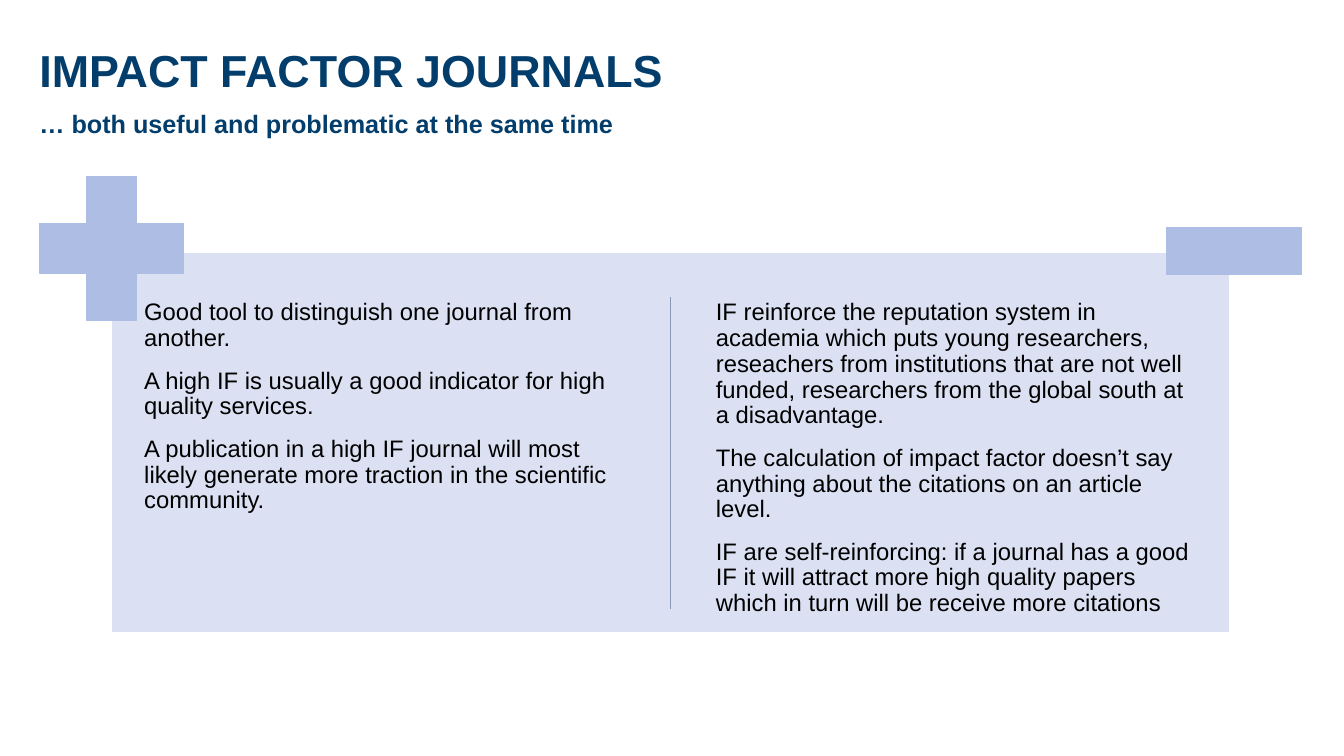
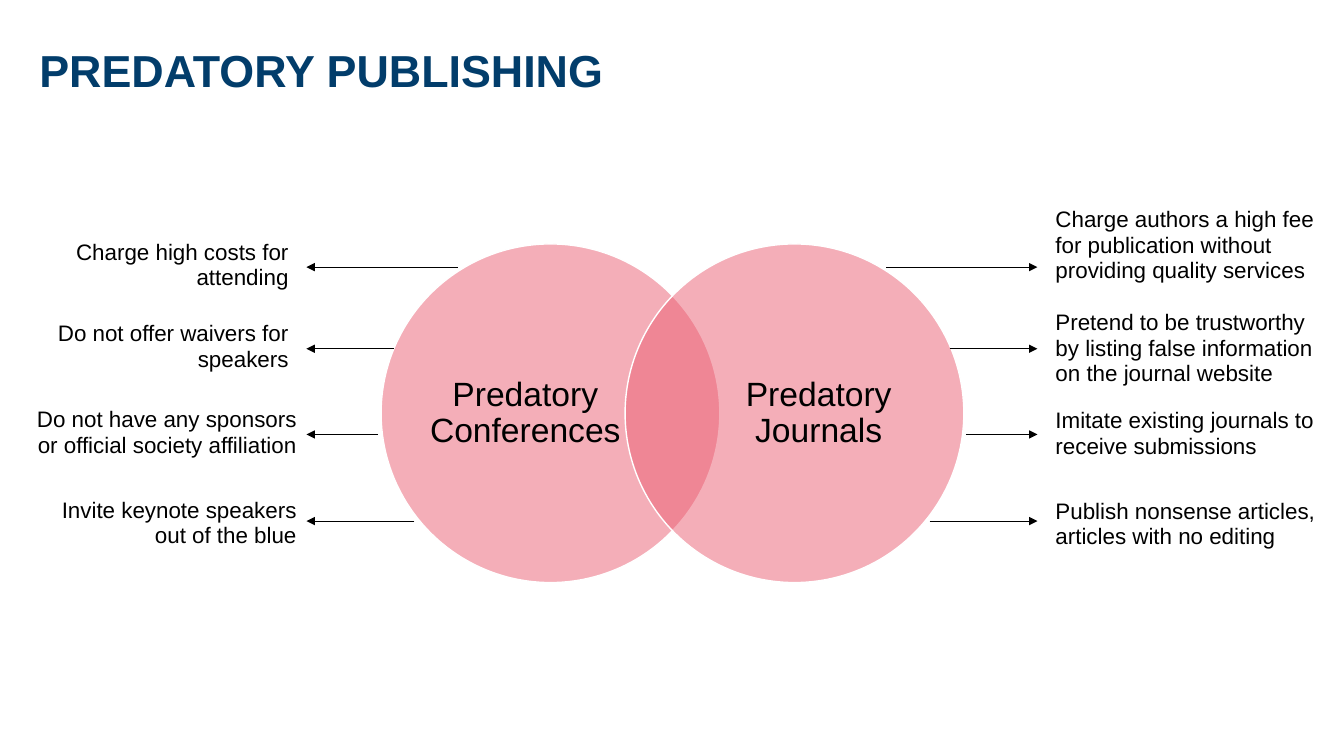
from dataclasses import dataclass

from lxml import etree
from pptx import Presentation
from pptx.dml.color import RGBColor
from pptx.enum import shapes, text
from pptx.oxml import ns
from pptx.slide import Slide
from pptx.util import Inches, Pt

WIDTH, HEIGHT = 13.33, 7.5
FONT = "Arial"
NAVY = RGBColor(0x02, 0x3D, 0x6B)
BLACK = RGBColor(0, 0, 0)
WHITE = RGBColor(0xFF, 0xFF, 0xFF)
PALE = RGBColor(0xDB, 0xE1, 0xF2)
BLUE = RGBColor(0xAD, 0xBD, 0xE3)
SLATE = RGBColor(0x8B, 0x97, 0xB6)
ROSE = RGBColor(0xEB, 0x5F, 0x73)

KIND = shapes.MSO_SHAPE
ALIGN = text.PP_ALIGN
ANCHOR = text.MSO_ANCHOR


@dataclass(frozen=True)
class Box:
    left: float
    top: float
    width: float
    height: float

    def place(self) -> tuple:
        return tuple(map(Inches, (self.left, self.top, self.width, self.height)))


@dataclass(frozen=True)
class Style:
    size: float
    color: RGBColor = BLACK
    bold: bool = False
    align: ALIGN = ALIGN.LEFT
    anchor: ANCHOR = ANCHOR.TOP
    line: float = 1.0
    after: float = 0
    pad: tuple = (0, 0)


@dataclass(frozen=True)
class Note:
    """A remark beside the circles."""
    left: float
    top: float
    height: float
    words: str


@dataclass(frozen=True)
class Ring:
    left: float
    label: float
    words: str


HEAD = Style(32, NAVY, True, line=1.14)
SUB = Style(18, NAVY, True, line=1.14)
BODY = Style(17, line=0.9, after=12, pad=(0.04, 0.04))
NAME = Style(24, align=ALIGN.CENTER, anchor=ANCHOR.MIDDLE, line=0.9, after=8.4)
SIDE = Style(16, line=0.95, pad=(0.1, 0.05))
LEFT = Style(16, align=ALIGN.RIGHT, line=0.95, pad=(0.1, 0.05))

COLUMNS = {
    1.39: (
        "Good tool to distinguish one journal from another.",
        "A high IF is usually a good indicator for high quality services.",
        "A publication in a high IF journal will most likely generate more "
        "traction in the scientific community.",
    ),
    7.06: (
        "IF reinforce the reputation system in academia which puts young "
        "researchers, reseachers from institutions that are not well funded, "
        "researchers from the global south at a disadvantage.",
        "The calculation of impact factor doesn’t say anything about the "
        "citations on an article level.",
        "IF are self-reinforcing: if a journal has a good IF it will attract "
        "more high quality papers which in turn will be receive more citations",
    ),
}

RINGS = (
    Ring(3.78, 4.24, "Predatory Conferences"),
    Ring(6.2, 7.15, "Predatory Journals"),
)
RING_TOP, RING_SIZE = 2.42, 3.36

NOTES = (
    Note(0.15, 2.33, 0.61, "Charge high costs for attending"),
    Note(0.15, 3.14, 0.61, "Do not offer waivers for speakers"),
    Note(0.23, 3.99, 0.61,
         "Do not have any sponsors or official society affiliation"),
    Note(0.23, 4.89, 0.61, "Invite keynote speakers out of the blue"),
    Note(10.37, 2.01, 0.87, "Charge authors a high fee for publication "
         "without providing quality services"),
    Note(10.37, 3.03, 0.87, "Pretend to be trustworthy by listing false "
         "information on the journal website"),
    Note(10.37, 4, 0.61, "Imitate existing journals to receive submissions"),
    Note(10.37, 4.9, 0.61,
         "Publish nonsense articles, articles with no editing"),
)
# Start and height of each right-hand arrow; the left ones mirror them.
ARROWS = ((8.79, 2.65), (9.42, 3.46), (9.58, 4.31), (9.22, 5.17))
TIP = 10.29


def write(slide: Slide, box: Box, style: Style, *lines: str) -> None:
    frame = slide.shapes.add_textbox(*box.place()).text_frame
    frame.word_wrap = True
    frame.vertical_anchor = style.anchor
    frame.margin_left = frame.margin_right = Inches(style.pad[0])
    frame.margin_top = frame.margin_bottom = Inches(style.pad[1])
    frame.text = "\n".join(lines)
    for para in frame.paragraphs:
        para.alignment = style.align
        para.line_spacing = style.line
        para.space_after = Pt(style.after)
        for run in para.runs:
            run.font.name = FONT
            run.font.size = Pt(style.size)
            run.font.bold = style.bold
            run.font.color.rgb = style.color


def draw(slide: Slide, kind: KIND, box: Box, fill: RGBColor, edge: RGBColor):
    shape = slide.shapes.add_shape(kind, *box.place())
    shape.shadow.inherit = False
    shape.fill.solid()
    shape.fill.fore_color.rgb = fill
    shape.line.color.rgb = edge
    shape.line.width = Pt(1)
    return shape


def fade(shape, share: int) -> None:
    """Set the opacity of a solid fill, in percent."""
    color = shape.fill._xPr.find(".//" + ns.qn("a:srgbClr"))
    etree.SubElement(color, ns.qn("a:alpha")).set("val", str(share * 1000))


def rule(slide: Slide, start: tuple, end: tuple, color: RGBColor,
         width: float, arrow: bool = False) -> None:
    line = slide.shapes.add_connector(
        shapes.MSO_CONNECTOR.STRAIGHT, *map(Inches, start + end))
    line.line.color.rgb = color
    line.line.width = Pt(width)
    if arrow:
        tail = etree.SubElement(line.line._get_or_add_ln(), ns.qn("a:tailEnd"))
        tail.set("type", "triangle")
    etree.SubElement(line._element.spPr, ns.qn("a:effectLst"))


def start(deck, title: str) -> Slide:
    """Add a blank slide with its title."""
    slide = deck.slides.add_slide(deck.slide_layouts[6])
    write(slide, Box(0.39, 0.35, 12.52, 1.23), HEAD, title)
    return slide


def impact(deck) -> None:
    slide = start(deck, "IMPACT FACTOR JOURNALS")
    write(slide, Box(0.39, 1.03, 12.52, 0.56), SUB,
          "… both useful and problematic at the same time")
    draw(slide, KIND.RECTANGLE, Box(1.1, 2.5, 11.1, 3.78), PALE, WHITE)
    for left, lines in COLUMNS.items():
        write(slide, Box(left, 2.94, 4.91, 3.23), BODY, *lines)
    plus = draw(slide, KIND.CROSS, Box(0.39, 1.75, 1.43, 1.43), BLUE, BLUE)
    plus.adjustments[0] = 0.328
    draw(slide, KIND.RECTANGLE, Box(11.57, 2.26, 1.34, 0.46), BLUE, BLUE)
    rule(slide, (6.65, 2.95), (6.65, 6.04), SLATE, 1)


def predatory(deck) -> None:
    slide = start(deck, "PREDATORY PUBLISHING")
    for ring in RINGS:
        box = Box(ring.left, RING_TOP, RING_SIZE, RING_SIZE)
        fade(draw(slide, KIND.OVAL, box, ROSE, WHITE), 50)
        write(slide, Box(ring.label, 2.82, 1.94, 2.57), NAME, ring.words)
    for note in NOTES:
        style = LEFT if note.left < WIDTH / 2 else SIDE
        write(slide, Box(note.left, note.top, 2.81, note.height), style,
              note.words)
    for x, y in ARROWS:
        rule(slide, (x, y), (TIP, y), BLACK, 0.5, True)
        rule(slide, (WIDTH - x, y), (WIDTH - TIP, y), BLACK, 0.5, True)


def main() -> None:
    deck = Presentation()
    deck.slide_width, deck.slide_height = Inches(WIDTH), Inches(HEIGHT)
    impact(deck)
    predatory(deck)
    deck.save("out.pptx")


if __name__ == "__main__":
    main()
